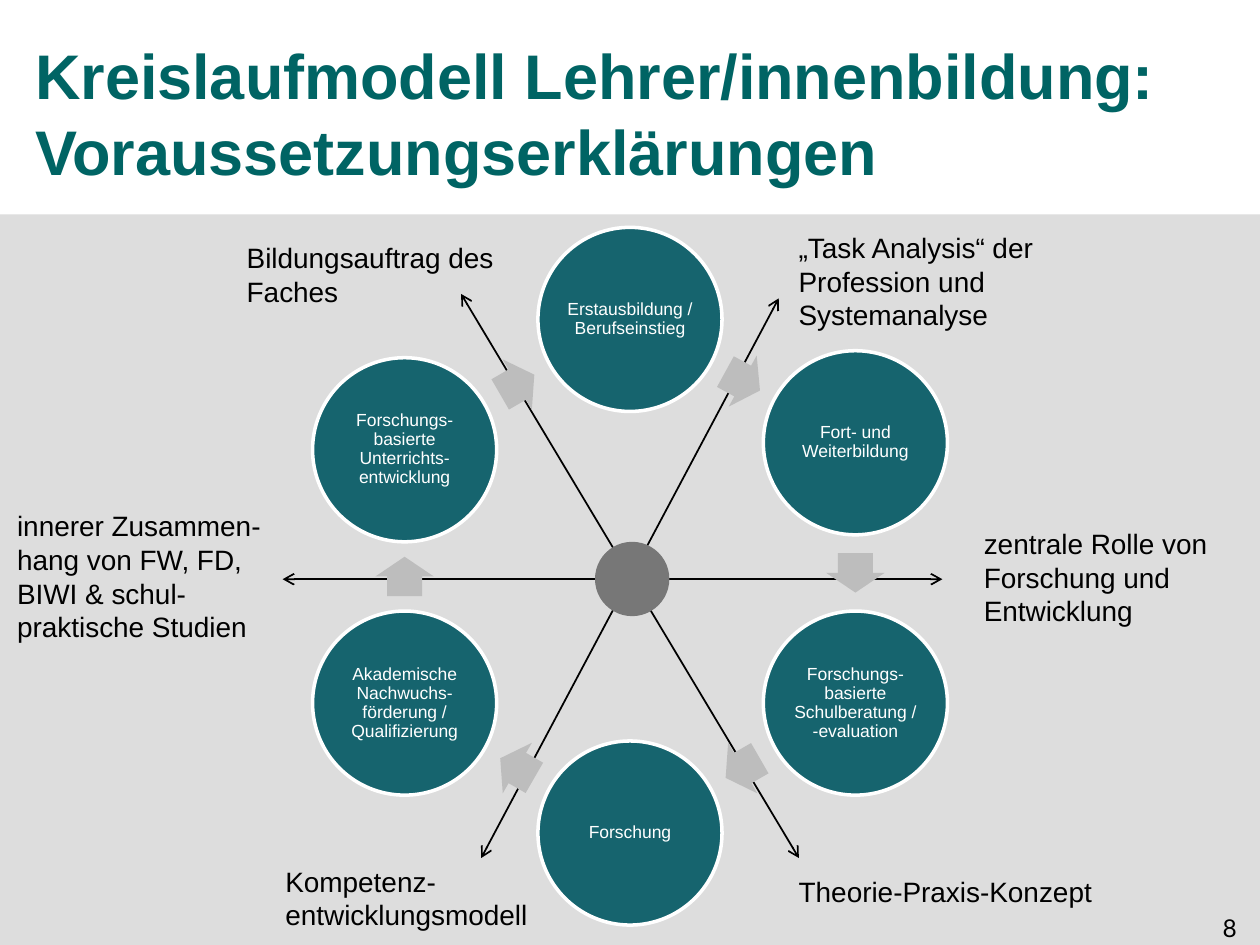
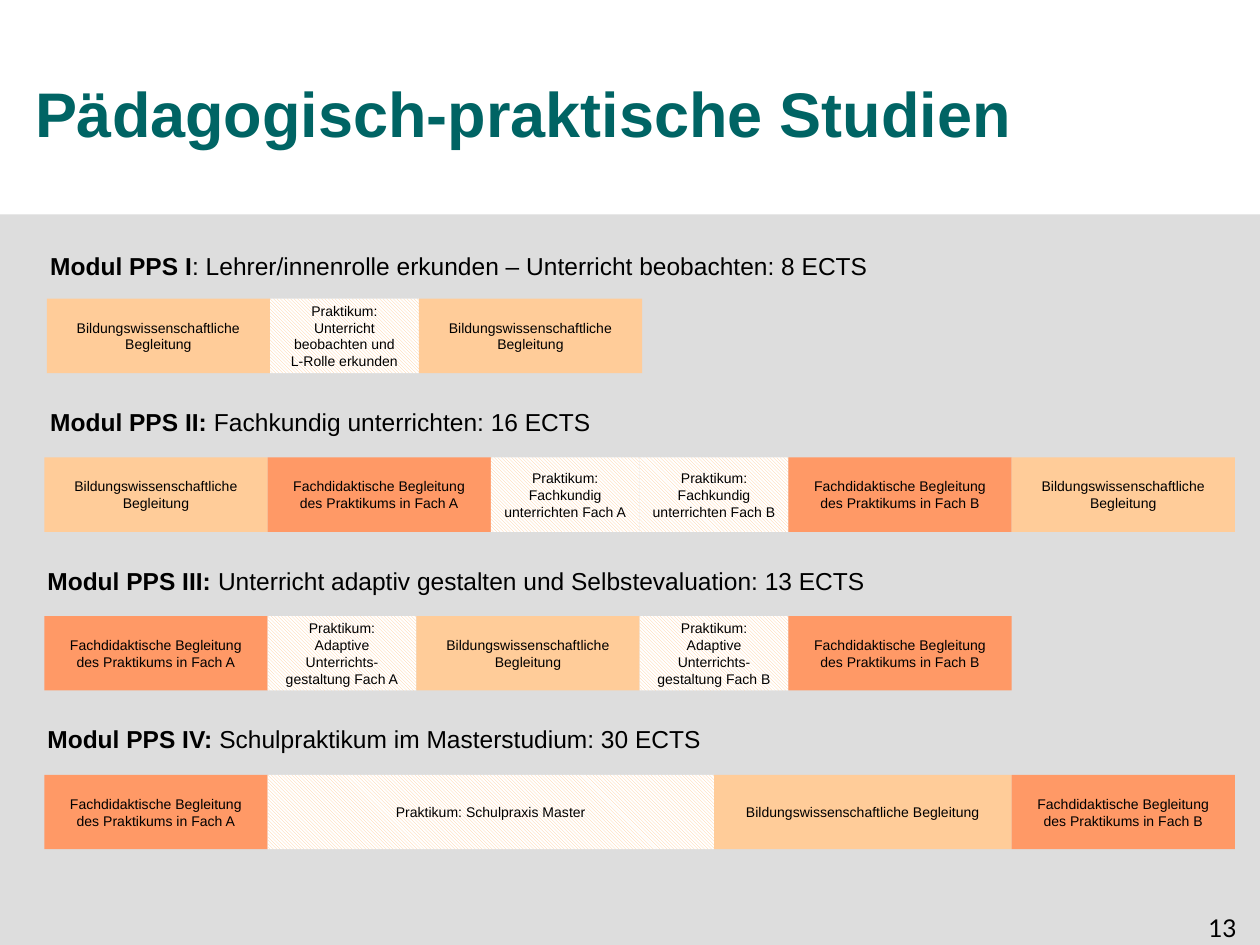
from itertools import pairwise
from math import atan2, degrees

from lxml.etree import SubElement
from pptx import Presentation
from pptx.dml.color import RGBColor
from pptx.enum.dml import MSO_PATTERN
from pptx.enum.shapes import MSO_CONNECTOR, MSO_SHAPE
from pptx.enum.text import MSO_ANCHOR, MSO_AUTO_SIZE, PP_ALIGN
from pptx.oxml.ns import qn
from pptx.util import Pt

BLACK = RGBColor(0x00, 0x00, 0x00)
WHITE = RGBColor(0xFF, 0xFF, 0xFF)
TITLE_GREEN = RGBColor(0x00, 0x64, 0x64)
BAND_GRAY = RGBColor(0xDD, 0xDD, 0xDD)
HUB_GRAY = RGBColor(0x77, 0x77, 0x77)
ARROW_GRAY = RGBColor(0xBD, 0xBD, 0xBD)
TEAL = RGBColor(0x16, 0x64, 0x6E)
ORANGE = RGBColor(0xFF, 0x99, 0x66)
PEACH = RGBColor(0xFF, 0xCC, 0x99)


def write(p, text, size, color=BLACK, bold=False, font="Arial"):
    """Append text to paragraph p; a newline becomes a line break."""
    for i, line in enumerate(text.split("\n")):
        if i:
            p.add_line_break()
        r = p.add_run()
        r.text = line
        r.font.name = font
        r.font.size = Pt(size)
        r.font.bold = bold
        r.font.color.rgb = color


def add_flat(s, kind, left, top, width, height, fill=None):
    """Add a preset shape without shadow or outline."""
    sp = s.shapes.add_shape(kind, Pt(left), Pt(top), Pt(width), Pt(height))
    sp.shadow.inherit = False
    sp.line.fill.background()
    if fill is not None:
        sp.fill.solid()
        sp.fill.fore_color.rgb = fill
    return sp


prs = Presentation()
prs.slide_width, prs.slide_height = Pt(720), Pt(540)

# Shared frame: gray band, title, page number
slides = []
for title, page in [
    ("Kreislaufmodell Lehrer/innenbildung: Voraussetzungserklärungen", "8"),
    ("Pädagogisch-praktische Studien", "13"),
]:
    s = prs.slides.add_slide(prs.slide_layouts[5])
    add_flat(s, MSO_SHAPE.RECTANGLE, 0, 122.5, 720, 417.5, BAND_GRAY)

    sp = s.shapes.title
    sp.left, sp.top, sp.width, sp.height = Pt(20), Pt(14.4), Pt(680), Pt(99.4)
    tf = sp.text_frame
    tf.margin_left = tf.margin_right = tf.margin_top = tf.margin_bottom = 0
    tf.auto_size = MSO_AUTO_SIZE.NONE
    tf.vertical_anchor = MSO_ANCHOR.MIDDLE
    p = tf.paragraphs[0]
    p.alignment = PP_ALIGN.LEFT
    write(p, title, 36, TITLE_GREEN, bold=True)

    tf = s.shapes.add_textbox(Pt(563.8), Pt(518.4), Pt(150), Pt(24)).text_frame
    tf.word_wrap = True
    p = tf.paragraphs[0]
    p.alignment = PP_ALIGN.RIGHT
    write(p, page, 14, font="Lato")
    slides.append(s)

cycle_slide, modules_slide = slides

# Slide 1: outer labels
s = cycle_slide
for left, top, width, height, *lines in [
    (449.3, 128.2, 154, 65.5, "„Task Analysis“ der Profession und Systemanalyse"),
    (555.1, 297.4, 146.2, 65.5, "zentrale Rolle von Forschung und Entwicklung"),
    (449.3, 496, 193, 26.6, "Theorie-Praxis-Konzept"),
    (156, 490.3, 153.8, 46, "Kompetenz-entwicklungsmodell"),
    (2.7, 287.3, 158.4, 85, "innerer Zusammen-", "hang von FW, FD,",
     "BIWI & schul-", "praktische Studien"),
    (133.9, 133.9, 163.4, 46, "Bildungsauftrag des Faches"),
]:
    tf = s.shapes.add_textbox(Pt(left), Pt(top), Pt(width), Pt(height)).text_frame
    tf.word_wrap = True
    for i, line in enumerate(lines):
        p = tf.add_paragraph() if i else tf.paragraphs[0]
        write(p, line, 16)

# Double-headed axes through the hub
for x1, y1, x2, y2 in [
    (161.5, 331, 538.5, 331),
    (275, 490.3, 445, 170.5),
    (456.5, 490.3, 263.5, 168),
]:
    cxn = s.shapes.add_connector(MSO_CONNECTOR.STRAIGHT, Pt(x1), Pt(y1), Pt(x2), Pt(y2))
    cxn.line.color.rgb = BLACK
    cxn.line.width = Pt(1)
    ln = cxn.line._get_or_add_ln()
    for end in ("a:headEnd", "a:tailEnd"):
        SubElement(ln, qn(end), type="arrow")
    SubElement(cxn._element.spPr, qn("a:effectLst"))

add_flat(s, MSO_SHAPE.OVAL, 340, 309.6, 42.5, 42.5, HUB_GRAY)

# Clockwise stations: centre x, centre y, text
DIAMETER = 105.2
stations = [
    (360, 182.5, "Erstausbildung / Berufseinstieg"),
    (488.8, 253, "Fort- und Weiterbildung"),
    (488.8, 401.8, "Forschungs-basierte Schulberatung /\n-evaluation"),
    (360, 476, "Forschung"),
    (231.2, 401.8, "Akademische Nachwuchs-förderung / Qualifizierung"),
    (231.2, 257, "Forschungs-basierte Unterrichts-entwicklung"),
]
for x, y, text in stations:
    sp = add_flat(s, MSO_SHAPE.OVAL, x - DIAMETER / 2, y - DIAMETER / 2,
                  DIAMETER, DIAMETER, TEAL)
    sp.line.color.rgb = WHITE
    sp.line.width = Pt(2)
    tf = sp.text_frame
    tf.word_wrap = True
    tf.margin_left = tf.margin_right = tf.margin_top = tf.margin_bottom = Pt(0.7)
    tf.vertical_anchor = MSO_ANCHOR.MIDDLE
    p = tf.paragraphs[0]
    p.alignment = PP_ALIGN.CENTER
    p.line_spacing = 0.9
    p.space_after = Pt(3.5)
    write(p, text, 10, WHITE)

# Each arrow sits midway between neighbours and points to the next one
ARROW_LENGTH, ARROW_WIDTH = 22.5, 33.3
for (x1, y1, _), (x2, y2, _) in pairwise(stations + stations[:1]):
    sp = add_flat(s, MSO_SHAPE.RIGHT_ARROW, (x1 + x2 - ARROW_LENGTH) / 2,
                  (y1 + y2 - ARROW_WIDTH) / 2, ARROW_LENGTH, ARROW_WIDTH, ARROW_GRAY)
    sp.adjustments[0], sp.adjustments[1] = 0.6, 0.5
    sp.rotation = degrees(atan2(y2 - y1, x2 - x1)) % 360

# Slide 2: each module is a heading over a bar of blocks, widths in units
s = modules_slide
UNIT = 42.52
BAR_TOP, BAR_STEP, BAR_HEIGHT = 170.7, 90.7, 42.5
EDUCATION = "Bildungswissenschaftliche Begleitung"
SUBJECT_A = "Fachdidaktische Begleitung des Praktikums in Fach A"
SUBJECT_B = "Fachdidaktische Begleitung des Praktikums in Fach B"
FILLS = {EDUCATION: PEACH, SUBJECT_A: ORANGE, SUBJECT_B: ORANGE}

modules = [
    (21.6, 139.7, "Modul PPS I",
     ": Lehrer/innenrolle erkunden – Unterricht beobachten: 8 ECTS", 26.8,
     [(3, EDUCATION),
      (2, "Praktikum: Unterricht beobachten und\nL-Rolle erkunden"),
      (3, EDUCATION)]),
    (21.6, 229.2, "Modul PPS II: ", "Fachkundig unterrichten: 16 ECTS", 25.4,
     [(3, EDUCATION), (3, SUBJECT_A),
      (2, "Praktikum: Fachkundig unterrichten Fach A"),
      (2, "Praktikum: Fachkundig unterrichten Fach B"),
      (3, SUBJECT_B), (3, EDUCATION)]),
    (20, 319.7, "Modul PPS III: ",
     "Unterricht adaptiv gestalten und Selbstevaluation: 13 ECTS", 25.4,
     [(3, SUBJECT_A),
      (2, "Praktikum: Adaptive Unterrichts-gestaltung Fach A"),
      (3, EDUCATION),
      (2, "Praktikum: Adaptive Unterrichts-gestaltung Fach B"),
      (3, SUBJECT_B)]),
    (20, 410.4, "Modul PPS IV: ", "Schulpraktikum im Masterstudium: 30 ECTS", 25.4,
     [(3, SUBJECT_A), (6, "Praktikum: Schulpraxis Master"),
      (4, EDUCATION), (3, SUBJECT_B)]),
]
for row, (head_left, head_top, name, topic, left, blocks) in enumerate(modules):
    tf = s.shapes.add_textbox(Pt(head_left), Pt(head_top), Pt(668), Pt(24.5)).text_frame
    tf.word_wrap = True
    write(tf.paragraphs[0], name, 14, bold=True)
    write(tf.paragraphs[0], topic, 14)

    for units, text in blocks:
        sp = add_flat(s, MSO_SHAPE.RECTANGLE, left, BAR_TOP + row * BAR_STEP,
                      units * UNIT, BAR_HEIGHT, FILLS.get(text))
        if text not in FILLS:
            sp.fill.patterned()
            sp.fill.pattern = MSO_PATTERN.LIGHT_DOWNWARD_DIAGONAL
            sp.fill.fore_color.rgb = PEACH
            sp.fill.back_color.rgb = WHITE
        tf = sp.text_frame
        tf.word_wrap = True
        tf.vertical_anchor = MSO_ANCHOR.MIDDLE
        p = tf.paragraphs[0]
        p.alignment = PP_ALIGN.CENTER
        write(p, text, 8)
        left += units * UNIT

prs.save("out.pptx")
